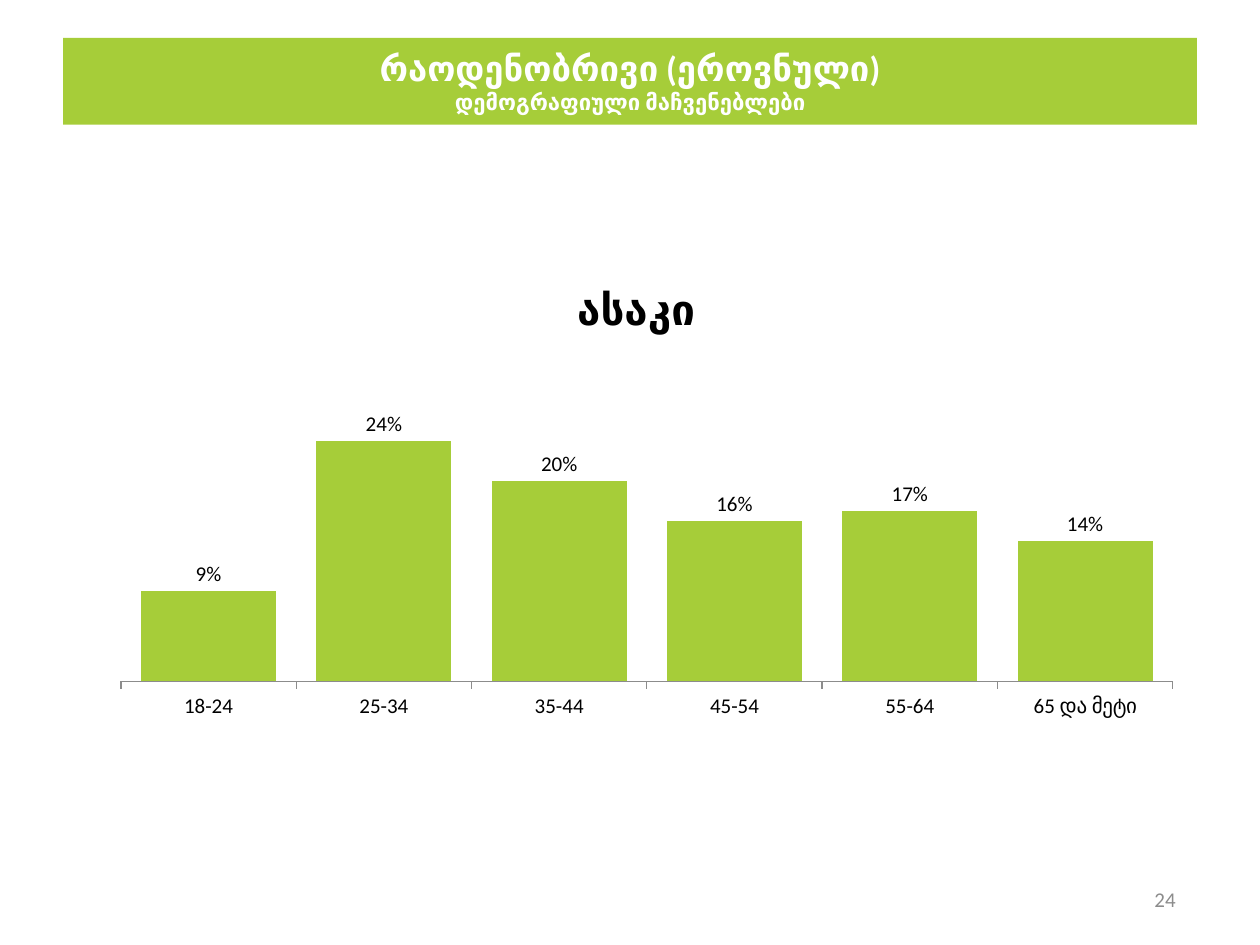
from dataclasses import dataclass

from lxml.etree import SubElement
from pptx import Presentation
from pptx.chart.data import CategoryChartData
from pptx.dml.color import RGBColor
from pptx.enum.chart import XL_CHART_TYPE as ChartType
from pptx.enum.chart import XL_LABEL_POSITION as LabelPosition
from pptx.enum.chart import XL_TICK_MARK as TickMark
from pptx.enum.text import MSO_ANCHOR as Anchor
from pptx.enum.text import PP_ALIGN as Align
from pptx.oxml import parse_xml
from pptx.oxml.ns import nsdecls, qn
from pptx.util import Pt


@dataclass(frozen=True)
class Theme:
    font: str = "Calibri"
    green: RGBColor = RGBColor(0xA6, 0xCD, 0x39)
    white: RGBColor = RGBColor(0xFF, 0xFF, 0xFF)
    black: RGBColor = RGBColor(0, 0, 0)
    grey: RGBColor = RGBColor(0x8C, 0x8C, 0x8C)
    heading: float = 19.8
    subheading: float = 12.6
    chart_title: float = 24
    chart_text: float = 18
    small: float = 12


THEME = Theme()
AGE_SHARES = {
    "18-24": 0.09,
    "25-34": 0.24,
    "35-44": 0.2,
    "45-54": 0.16,
    "55-64": 0.17,
    "65 და მეტი": 0.14,
}


def style_font(font, size, color, bold=False):
    font.name = THEME.font
    font.size = Pt(size)
    font.bold = bold
    font.color.rgb = color


def set_layout(parent, index, **places):
    for old in parent.findall(qn("c:layout")):
        parent.remove(old)
    layout = parse_xml(f"<c:layout {nsdecls('c')}/>")
    manual = SubElement(layout, qn("c:manualLayout"))
    for name, value in places.items():
        SubElement(manual, qn(f"c:{name}")).set("val", str(value))
    parent.insert(index, layout)


def fill_title(page, heading, subheading):
    title = page.shapes.title
    title.left, title.top, title.width, title.height = Pt(36), Pt(21.6), Pt(648), Pt(49.7)
    title.fill.solid()
    title.fill.fore_color.rgb = THEME.green
    frame = title.text_frame
    frame.vertical_anchor = Anchor.MIDDLE
    para = frame.paragraphs[0]
    para.alignment = Align.CENTER
    for text, size in ((heading, THEME.heading), (subheading, THEME.subheading)):
        if para.runs:
            para.add_line_break()
        span = para.add_run()
        span.text = text
        style_font(span.font, size, THEME.white, bold=True)


def add_page_number(page, text):
    box = page.shapes.add_textbox(Pt(649.4), Pt(499.7), Pt(29.5), Pt(28.8))
    frame = box.text_frame
    frame.word_wrap = True
    frame.vertical_anchor = Anchor.MIDDLE
    para = frame.paragraphs[0]
    para.text = text
    para.alignment = Align.RIGHT
    style_font(para.font, THEME.small, THEME.grey)


def add_column_chart(page, name, shares):
    data = CategoryChartData(number_format="0%")
    data.categories = list(shares)
    data.add_series(name, list(shares.values()))
    frame = page.shapes.add_chart(
        ChartType.COLUMN_CLUSTERED, Pt(40.3), Pt(139.7), Pt(640.8), Pt(334.8), data
    )
    chart = frame.chart
    chart.has_legend = False
    style_font(chart.font, THEME.chart_text, THEME.black)
    style_chart_title(chart, name)
    style_axes(chart)
    style_columns(chart.plots[0])
    set_layout(
        chart.plots[0]._element.getparent(), 0,
        layoutTarget="inner", xMode="edge", yMode="edge",
        x=0.045, y=0.063, w=0.938, h=0.683,
    )


def style_chart_title(chart, text):
    chart.has_title = True
    title = chart.chart_title
    para = title.text_frame.paragraphs[0]
    para.text = text
    style_font(para.font, THEME.chart_title, THEME.black, bold=True)
    set_layout(title._element, 1, xMode="edge", yMode="edge", x=0.445, y=0.05)


def style_axes(chart):
    values = chart.value_axis
    values.minimum_scale, values.maximum_scale, values.major_unit = 0, 0.4, 0.2
    values.has_major_gridlines = False
    values.visible = False
    ages = chart.category_axis
    ages.major_tick_mark = TickMark.OUTSIDE
    ages.format.line.color.rgb = THEME.grey
    style_font(ages.tick_labels.font, THEME.small, THEME.black)


def style_columns(plot):
    plot.gap_width = 30
    plot.vary_by_categories = False
    fill = plot.series[0].format.fill
    fill.solid()
    fill.fore_color.rgb = THEME.green
    plot.has_data_labels = True
    labels = plot.data_labels
    labels.show_value = True
    labels.number_format = "0%"
    labels.number_format_is_linked = False
    labels.position = LabelPosition.OUTSIDE_END
    style_font(labels.font, THEME.small, THEME.black)


def main():
    """Build the age distribution slide and save it."""
    deck = Presentation()
    deck.slide_width, deck.slide_height = Pt(720), Pt(540)
    page = deck.slides.add_slide(deck.slide_layouts[5])
    fill_title(page, "რაოდენობრივი (ეროვნული)", "დემოგრაფიული მაჩვენებლები")
    add_page_number(page, "24")
    add_column_chart(page, "ასაკი", AGE_SHARES)
    deck.save("out.pptx")


if __name__ == "__main__":
    main()
